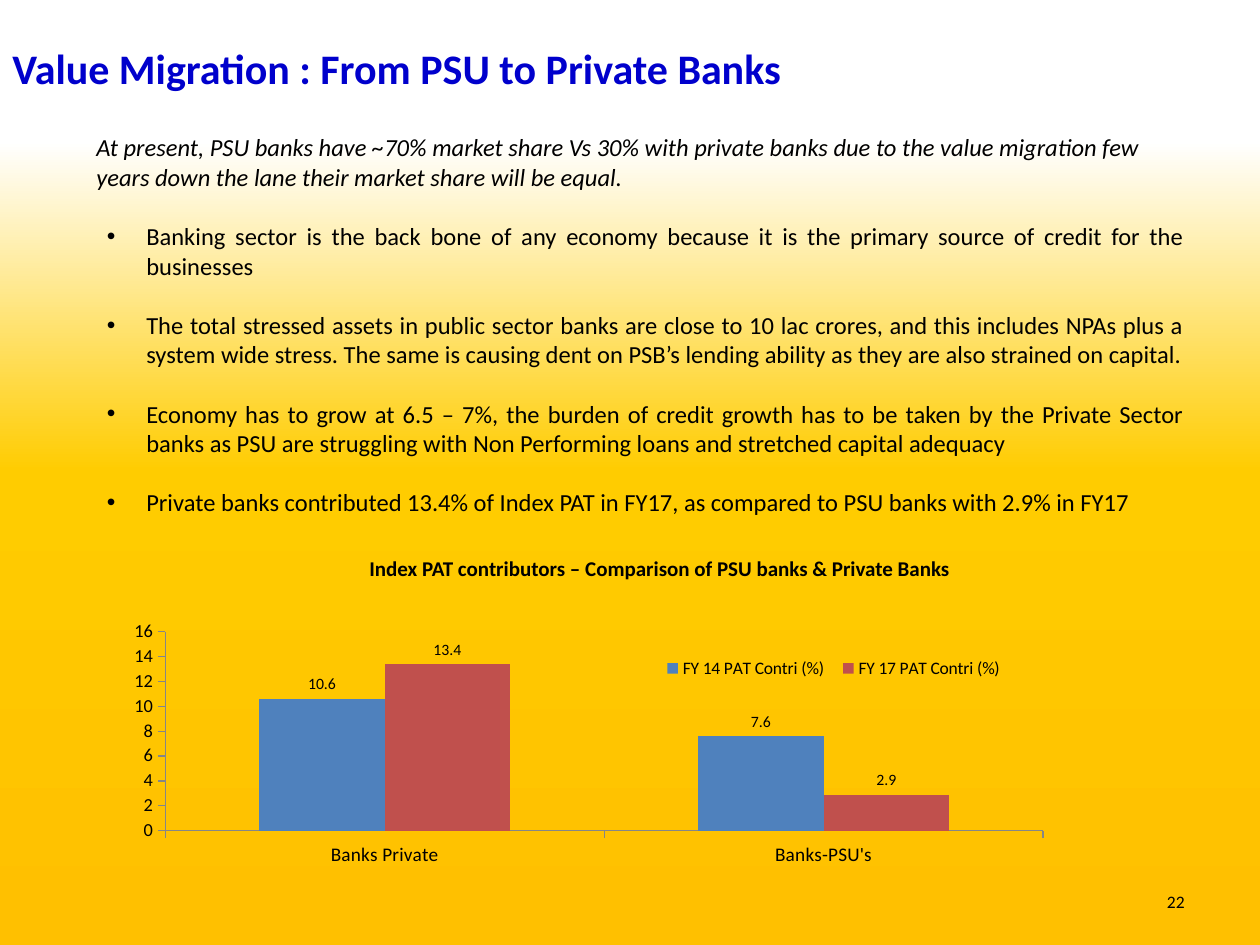
from copy import deepcopy

from lxml.etree import SubElement
from pptx import Presentation
from pptx.chart.data import CategoryChartData
from pptx.dml.color import RGBColor
from pptx.enum.chart import XL_CHART_TYPE, XL_LABEL_POSITION, XL_LEGEND_POSITION, XL_TICK_MARK
from pptx.enum.text import MSO_ANCHOR, MSO_AUTO_SIZE, PP_ALIGN
from pptx.oxml import parse_xml
from pptx.oxml.ns import nsdecls, qn
from pptx.util import Pt

AMBER = RGBColor(0xFF, 0xC0, 0x00)
YELLOW = RGBColor(0xFF, 0xCC, 0x00)
WHITE = RGBColor(0xFF, 0xFF, 0xFF)
BLACK = RGBColor(0x00, 0x00, 0x00)
TITLE_BLUE = RGBColor(0x00, 0x00, 0xCC)
SERIES_BLUE = RGBColor(0x4F, 0x81, 0xBD)
SERIES_RED = RGBColor(0xC0, 0x50, 0x4D)
AXIS_GREY = RGBColor(0x86, 0x86, 0x86)
FONT_NAME = "Calibri"

BULLETS = [
    "Banking sector is the back bone of any economy because it is the primary source "
    "of credit for the businesses",
    "The total stressed assets in public sector banks are close to 10 lac crores, and this "
    "includes NPAs plus a system wide stress. The same is causing dent on PSB’s lending "
    "ability as they are also strained on capital.",
    "Economy has to grow at 6.5 – 7%, the burden of credit growth has to be taken by the "
    "Private Sector banks as PSU are struggling with Non Performing loans and stretched "
    "capital adequacy",
    "Private banks contributed 13.4% of Index PAT in FY17, as compared to PSU banks "
    "with 2.9% in FY17",
]
CATEGORIES = ["Banks Private", "Banks-PSU's"]
SERIES = [
    ("FY 14 PAT Contri (%)", (10.6, 7.6), SERIES_BLUE),
    ("FY 17 PAT Contri (%)", (13.4, 2.9), SERIES_RED),
]


def set_font(font, size, color=BLACK, bold=False, italic=False):
    font.name = FONT_NAME
    font.size = Pt(size)
    font.color.rgb = color
    font.bold = bold
    font.italic = italic


def paint_background(slide):
    fill = slide.background.fill
    fill.gradient()
    fill.gradient_angle = 90
    stop_list = slide.element.find(".//" + qn("a:gsLst"))
    stop_list.append(deepcopy(stop_list[0]))
    stops = ((0, AMBER), (0.5, YELLOW), (0.85, WHITE))
    for stop, (position, color) in zip(fill.gradient_stops, stops):
        stop.position = position
        stop.color.rgb = color


def add_text(slide, box, text, size, alignment=PP_ALIGN.LEFT, **style):
    shape = slide.shapes.add_textbox(*map(Pt, box))
    frame = shape.text_frame
    frame.word_wrap = True
    frame.auto_size = MSO_AUTO_SIZE.SHAPE_TO_FIT_TEXT
    frame.text = text
    for paragraph in frame.paragraphs:
        paragraph.alignment = alignment
        for run in paragraph.runs:
            set_font(run.font, size, **style)
    return shape


def add_bullets(slide, box, items):
    shape = add_text(slide, box, "\n".join(items), 14, PP_ALIGN.JUSTIFY)
    for index, paragraph in enumerate(shape.text_frame.paragraphs):
        if index:
            paragraph.space_before = Pt(17)
        properties = paragraph._p.get_or_add_pPr()
        properties.set("marL", str(Pt(22.5)))
        properties.set("indent", str(-Pt(22.5)))
        SubElement(properties, qn("a:buFont"), typeface="Arial")
        SubElement(properties, qn("a:buChar"), char="•")


def add_page_number(slide, box, number):
    shape = add_text(slide, box, number, 10, PP_ALIGN.RIGHT)
    shape.text_frame.auto_size = MSO_AUTO_SIZE.NONE
    shape.text_frame.vertical_anchor = MSO_ANCHOR.MIDDLE


def manual_layout(x, y, width, height, inner=False):
    target = '<c:layoutTarget val="inner"/>' if inner else ""
    return parse_xml(
        f'<c:layout {nsdecls("c")}><c:manualLayout>{target}'
        '<c:xMode val="edge"/><c:yMode val="edge"/>'
        f'<c:x val="{x}"/><c:y val="{y}"/><c:w val="{width}"/><c:h val="{height}"/>'
        "</c:manualLayout></c:layout>"
    )


def format_axis(axis, size):
    axis.has_major_gridlines = False
    axis.major_tick_mark = XL_TICK_MARK.OUTSIDE
    axis.format.line.color.rgb = AXIS_GREY
    set_font(axis.tick_labels.font, size)


def add_profit_chart(slide, box):
    data = CategoryChartData()
    data.categories = CATEGORIES
    for name, values, _ in SERIES:
        data.add_series(name, values)
    chart = slide.shapes.add_chart(XL_CHART_TYPE.COLUMN_CLUSTERED, *map(Pt, box), data).chart
    set_font(chart.font, 8)
    chart.has_title = False
    format_axis(chart.category_axis, 11)
    format_axis(chart.value_axis, 10.5)
    chart.value_axis.minimum_scale = 0
    chart.value_axis.maximum_scale = 16
    chart.value_axis.major_unit = 2

    plot = chart.plots[0]
    plot.gap_width = 150
    plot.overlap = 0
    plot.vary_by_categories = False
    for series, (_, _, color) in zip(plot.series, SERIES):
        series.format.fill.solid()
        series.format.fill.fore_color.rgb = color
        labels = series.data_labels
        labels.show_value = True
        labels.position = XL_LABEL_POSITION.OUTSIDE_END
        set_font(labels.font, 9)

    chart.has_legend = True
    legend = chart.legend
    legend.position = XL_LEGEND_POSITION.RIGHT
    legend.include_in_layout = False
    set_font(legend.font, 10)
    legend_element = legend._element
    plot_area = chart._chartSpace.chart.plotArea
    for element in (legend_element, plot_area):
        for layout in element.findall(qn("c:layout")):
            element.remove(layout)
    plot_area.insert(0, manual_layout(0.05, 0.07, 0.88, 0.73, inner=True))
    legend_element.find(qn("c:legendPos")).addnext(manual_layout(0.54, 0.15, 0.36, 0.11))


def main():
    presentation = Presentation()
    presentation.slide_width = Pt(720)
    presentation.slide_height = Pt(540)
    slide = presentation.slides.add_slide(presentation.slide_layouts[6])
    paint_background(slide)
    add_page_number(slide, (516, 500.5, 168, 29), "22")
    add_text(slide, (0, 21, 512, 36), "Value Migration : From PSU to Private Banks", 24,
             color=TITLE_BLUE, bold=True)
    add_text(slide, (48, 72, 618, 41),
             "At present, PSU banks have ~70% market share Vs 30% with private banks due to the "
             "value migration few years down the lane their market share will be equal.",
             14, italic=True)
    add_bullets(slide, (54, 123, 630, 194), BULLETS)
    add_text(slide, (204, 314, 354, 22),
             "Index PAT contributors – Comparison of PSU banks & Private Banks", 12, bold=True)
    add_profit_chart(slide, (66, 350, 570, 156))
    presentation.save("out.pptx")


if __name__ == "__main__":
    main()
